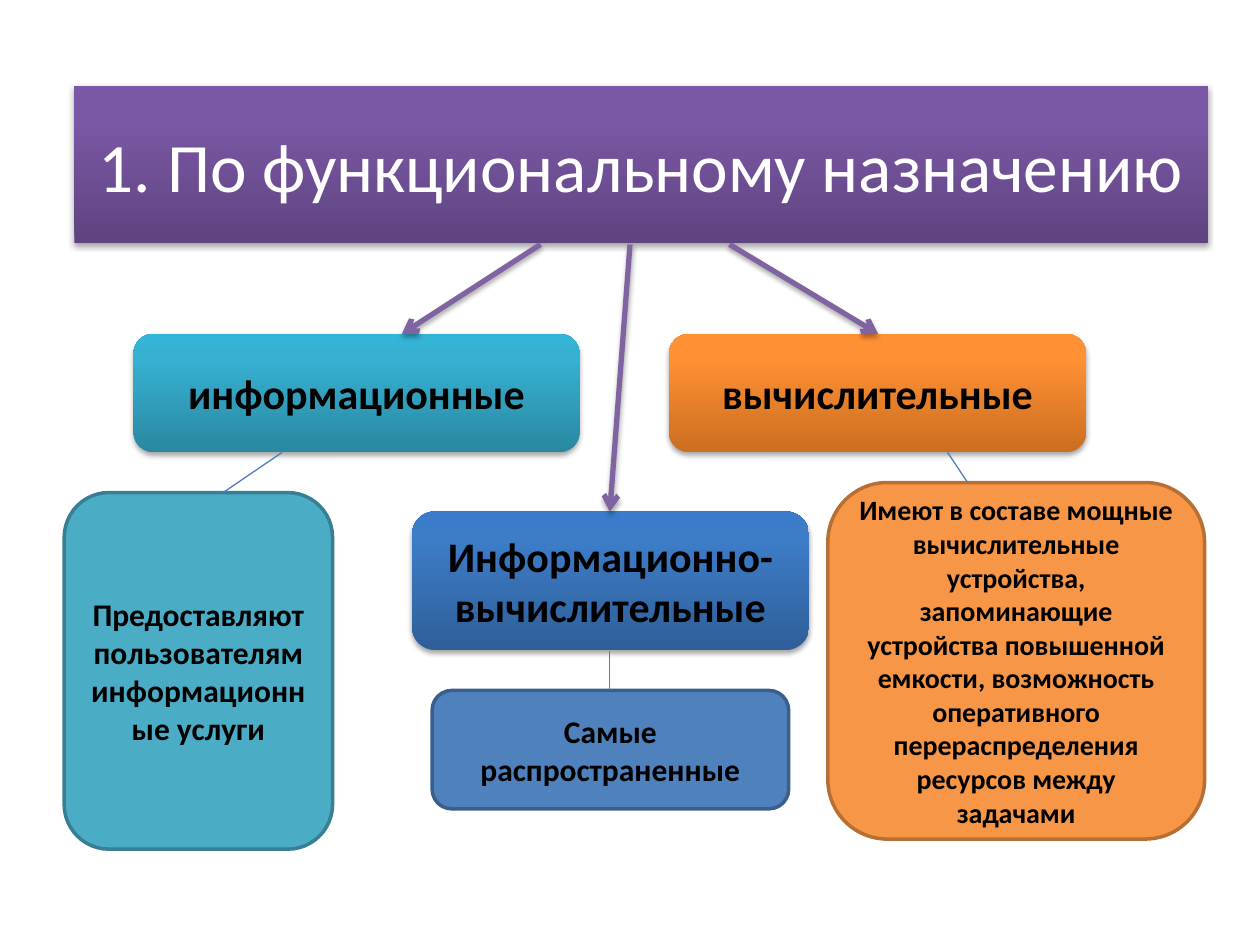
from lxml.etree import SubElement
from copy import deepcopy
from pptx import Presentation
from pptx.dml.color import RGBColor
from pptx.enum.shapes import MSO_CONNECTOR as LINK, MSO_SHAPE as SHAPE
from pptx.enum.text import MSO_ANCHOR as ANCHOR, MSO_AUTO_SIZE as FIT, PP_ALIGN as ALIGN
from pptx.oxml.ns import qn
from pptx.util import Inches, Pt

BLACK = RGBColor(0x00, 0x00, 0x00)
WHITE = RGBColor(0xFF, 0xFF, 0xFF)
PURPLE = RGBColor(0x80, 0x64, 0xA2)
THIN_BLUE = RGBColor(0x4B, 0x7E, 0xBC)
# Gradients run from the bottom edge to the top
PURPLES = [RGBColor(0x5F, 0x44, 0x80), RGBColor(0x7B, 0x58, 0xA6), RGBColor(0x7C, 0x57, 0xA8)]
TEALS = [RGBColor(0x2A, 0x88, 0xA2), RGBColor(0x37, 0xB1, 0xD2), RGBColor(0x34, 0xB4, 0xD6)]
ORANGES = [RGBColor(0xCC, 0x6E, 0x20), RGBColor(0xFF, 0x90, 0x34), RGBColor(0xFF, 0x91, 0x36)]
BLUES = [RGBColor(0x2F, 0x5F, 0x99), RGBColor(0x3D, 0x7C, 0xC7), RGBColor(0x3A, 0x7C, 0xCB)]
TEAL, TEAL_EDGE = RGBColor(0x4B, 0xAC, 0xC6), RGBColor(0x37, 0x7F, 0x92)
ORANGE, ORANGE_EDGE = RGBColor(0xF7, 0x96, 0x46), RGBColor(0xB7, 0x6F, 0x34)
BLUE, BLUE_EDGE = RGBColor(0x4F, 0x81, 0xBD), RGBColor(0x3A, 0x5F, 0x8C)


def add_shadow(effects):
    shadow = SubElement(effects, qn("a:outerShdw"), blurRad=str(Pt(3.1)),
                        dist=str(Pt(1.8)), dir="5400000", rotWithShape="0")
    color = SubElement(shadow, qn("a:srgbClr"), val="000000")
    SubElement(color, qn("a:alpha"), val="35000")


def format_box(box, place, text, size, color, bold):
    box.left, box.top, box.width, box.height = [Inches(n) for n in place]
    box.shadow.inherit = False
    frame = box.text_frame
    frame.word_wrap = True
    frame.auto_size = FIT.NONE
    frame.vertical_anchor = ANCHOR.MIDDLE
    para = frame.paragraphs[0]
    para.alignment = ALIGN.CENTER
    span = para.add_run()
    span.text = text
    span.font.name = "Calibri"
    span.font.size = Pt(size)
    span.font.bold = bold
    span.font.color.rgb = color


deck = Presentation()
deck.slide_width, deck.slide_height = Inches(10), Inches(7.5)
page = deck.slides.add_slide(deck.slide_layouts[5])

# Title and the three categories
title = page.shapes.title
format_box(title, (0.59, 0.68, 9, 1.25), "1. По функциональному назначению", 39.6, WHITE, False)
gradient_boxes = [(title, PURPLES)]
categories = [
    ((1.06, 2.65, 3.54, 0.94), "информационные", TEALS),
    ((5.31, 2.65, 3.31, 0.94), "вычислительные", ORANGES),
    ((3.27, 4.06, 3.15, 1.1), "Информационно-вычислительные", BLUES),
]
for place, text, colors in categories:
    box = page.shapes.add_shape(SHAPE.ROUNDED_RECTANGLE, 0, 0, 0, 0)
    format_box(box, place, text, 24, BLACK, True)
    gradient_boxes.append((box, colors))

for box, colors in gradient_boxes:
    box.line.fill.background()
    box.fill.gradient()
    box.fill.gradient_angle = 90
    stop_list = box.element.spPr.find(qn("a:gradFill")).find(qn("a:gsLst"))
    stop_list.append(deepcopy(stop_list[-1]))
    for stop, position, color in zip(box.fill.gradient_stops, (0, 0.8, 1), colors):
        stop.position = position
        stop.color.rgb = color
    add_shadow(box.element.spPr.find(qn("a:effectLst")))

# Descriptions of the categories
descriptions = [
    ((0.51, 3.91, 2.13, 2.83), "Предоставляют пользователям информационные услуги",
     18, TEAL, TEAL_EDGE),
    ((6.57, 3.83, 2.99, 2.83),
     "Имеют в составе мощные вычислительные устройства, запоминающие устройства "
     "повышенной емкости, возможность оперативного перераспределения ресурсов "
     "между задачами", 16, ORANGE, ORANGE_EDGE),
    ((3.43, 5.48, 2.83, 0.94), "Самые распространенные", 18, BLUE, BLUE_EDGE),
]
for place, text, size, color, edge in descriptions:
    box = page.shapes.add_shape(SHAPE.ROUNDED_RECTANGLE, 0, 0, 0, 0)
    format_box(box, place, text, size, BLACK, True)
    box.fill.solid()
    box.fill.fore_color.rgb = color
    box.line.color.rgb = edge
    box.line.width = Pt(2)

# Arrows from the title, then plain links to the descriptions
links = [
    ((5, 1.94, 4.84, 4.06), True),
    ((4.29, 1.94, 3.19, 2.65), True),
    ((5.79, 1.94, 6.97, 2.65), True),
    ((4.84, 5.17, 4.84, 5.48), False),
    ((2.24, 3.59, 1.77, 3.91), False),
    ((7.52, 3.59, 7.68, 3.83), False),
]
for ends, is_arrow in links:
    link = page.shapes.add_connector(LINK.STRAIGHT, *[Inches(n) for n in ends])
    link.line.color.rgb = PURPLE if is_arrow else THIN_BLUE
    link.line.width = Pt(3 if is_arrow else 0.75)
    properties = link.element.spPr
    effects = SubElement(properties, qn("a:effectLst"))
    if is_arrow:
        SubElement(properties.find(qn("a:ln")), qn("a:tailEnd"), type="arrow")
        add_shadow(effects)

deck.save("out.pptx")
